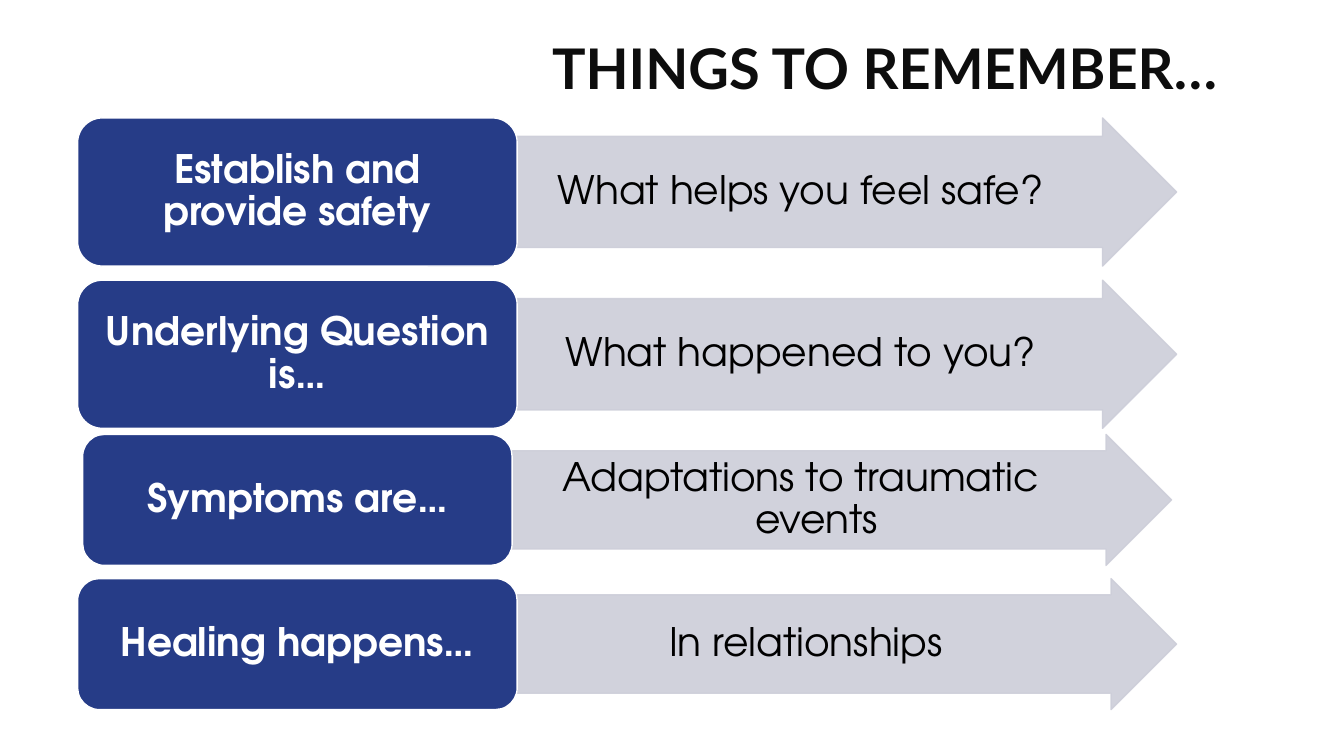
import pptx
import pptx.util
import pptx.dml.color
import pptx.enum.shapes
import pptx.enum.text
import pptx.oxml

TITLE = "THINGS TO REMEMBER…"
# label, answer, left, top, label width, height (inches)
ROWS = [
    ("Establish and provide safety", "What helps you feel safe?", 0.77, 1.17, 4.36, 1.47),
    ("Underlying Question is…", "What happened to you?", 0.77, 2.78, 4.36, 1.47),
    ("Symptoms are…", "Adaptations to traumatic events", 0.82, 4.31, 4.26, 1.3),
    ("Healing happens…", "In relationships", 0.77, 5.74, 4.36, 1.3),
]
COLORS = {"label": "263C87", "arrow": "CDCED9", "white": "FFFFFF",
          "black": "000000", "title": "0D0D0D"}
ARROW_W = 6.54
HANG = 0.31

Inches = pptx.util.Inches
Pt = pptx.util.Pt
Kind = pptx.enum.shapes.MSO_SHAPE
Align = pptx.enum.text.PP_ALIGN


def color(name):
    return pptx.dml.color.RGBColor.from_string(COLORS[name])


def write(shape, text, face, size, ink, bold, align):
    frame = shape.text_frame
    frame.text = text
    frame.word_wrap = True
    frame.auto_size = pptx.enum.text.MSO_AUTO_SIZE.NONE
    frame.vertical_anchor = pptx.enum.text.MSO_ANCHOR.MIDDLE
    para = frame.paragraphs[0]
    para.alignment = align
    para.line_spacing = 0.9
    para.font.name = face
    para.font.size = Pt(size)
    para.font.bold = bold
    para.font.color.rgb = color(ink)


def block(kind, box, fill, line, text, ink, bold, pads):
    """Add a filled shape with centred text; pads are left, top, right, bottom."""
    shape = slide.shapes.add_shape(kind, *map(Inches, box))
    shape.shadow.inherit = False
    shape.fill.solid()
    shape.fill.fore_color.rgb = color(fill)
    shape.line.color.rgb = color(line)
    shape.line.width = Pt(1)
    write(shape, text, "TeX Gyre Adventor", 28, ink, bold, Align.CENTER)
    frame = shape.text_frame
    (frame.margin_left, frame.margin_top,
     frame.margin_right, frame.margin_bottom) = map(Inches, pads)
    return shape


def soften(shape):
    """Make fill and line 90% opaque."""
    for tint in shape._element.spPr.iter(pptx.oxml.ns.qn("a:srgbClr")):
        tint.append(pptx.oxml.parse_xml(
            f'<a:alpha {pptx.oxml.ns.nsdecls("a")} val="90000"/>'))


deck = pptx.Presentation()
deck.slide_width, deck.slide_height = Inches(13.33), Inches(7.5)
slide = deck.slides.add_slide(deck.slide_layouts[5])

title = slide.shapes.title
title.left, title.top, title.width, title.height = map(Inches, (3.79, 0.25, 8.38, 0.92))
write(title, TITLE, "Lato", 40, "title", True, Align.RIGHT)

for label, answer, left, top, width, height in ROWS:
    # The right pad keeps the answer clear of the arrow's tip.
    arrow = block(Kind.RIGHT_ARROW, (left + width, top, ARROW_W, height),
                  "arrow", "arrow", answer, "black", False,
                  (0.02, 0.02, 0.02 + height / 4, 0.02))
    arrow.adjustments[0] = 0.75
    arrow.adjustments[1] = 0.5
    soften(arrow)
    props = arrow.text_frame.paragraphs[0]._p.get_or_add_pPr()
    props.set("marL", str(Inches(HANG)))
    props.set("indent", str(-Inches(HANG)))
    block(Kind.ROUNDED_RECTANGLE, (left, top, width, height),
          "label", "white", label, "white", True, (0.12, 0.06, 0.12, 0.06))

deck.save("out.pptx")
